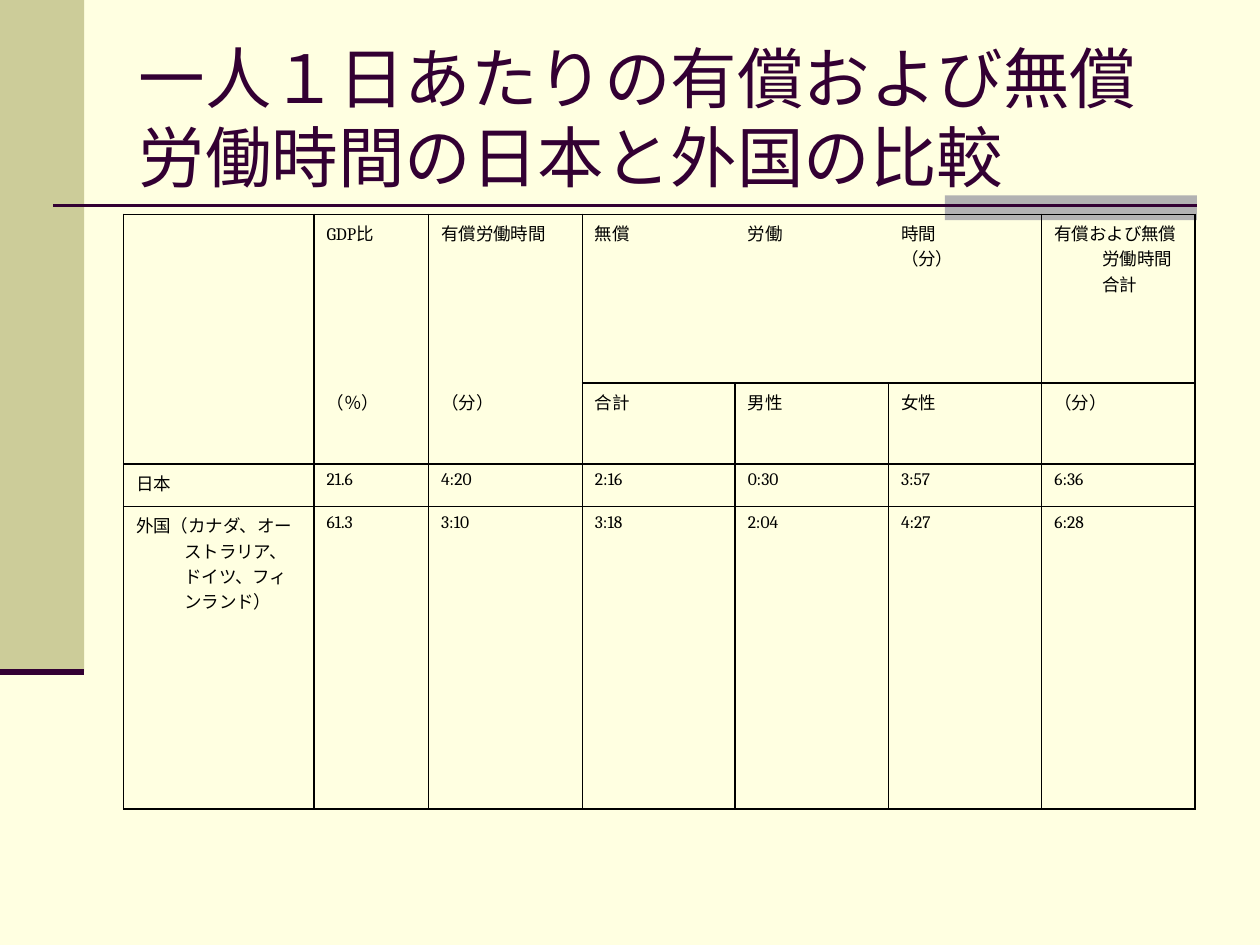
from lxml import etree
from pptx import Presentation
from pptx.dml.color import RGBColor
from pptx.enum import shapes, text
from pptx.oxml import ns
from pptx.util import Cm, Pt

TITLE = "一人１日あたりの有償および無償労働時間の日本と外国の比較"
ROWS = [
    ["", "GDP比", "有償労働時間", "無償", "労働", "時間\n（分）", "有償および無償労働時間合計"],
    ["", "（％）", "（分）", "合計", "男性", "女性", "（分）"],
    ["日本", "21.6", "4:20", "2:16", "0:30", "3:57", "6:36"],
    ["外国（カナダ、オーストラリア、ドイツ、フィンランド）",
     "61.3", "3:10", "3:18", "2:04", "4:27", "6:28"],
]
WIDTHS = [3.84, 2.31, 3.1, 3.08, 3.09, 3.09, 3.09]
HEIGHTS = [3.4, 1.63, 0.86, 6.1]
COLORS = {"page": "FFFFE1", "band": "CCCC99", "tab": "B2B2B2",
          "plum": "330033", "ink": "000000"}
BLOCKS = [("band", 0, 0, 1.7, 13.54), ("tab", 19.05, 3.94, 5.08, 0.5)]
RULES = [(1.07, 24.13, 4.14, 1.5), (0, 1.7, 13.54, 3.5)]
SIDES = {"L": (0, -1), "R": (0, 1), "T": (-1, 0), "B": (1, 0)}
OPEN = [{(0, c), (1, c)} for c in range(3)] + [{(0, c), (0, c + 1)} for c in (3, 4)]
THIN = {(0, 6), (1, 6)}


def color(name):
    return RGBColor.from_string(COLORS[name])


def add_block(slide, name, *box):
    block = slide.shapes.add_shape(shapes.MSO_SHAPE.RECTANGLE, *map(Cm, box))
    block.shadow.inherit = False
    block.fill.solid()
    block.fill.fore_color.rgb = color(name)
    block.line.fill.background()


def add_rule(slide, left, right, y, weight):
    rule = slide.shapes.add_connector(
        shapes.MSO_CONNECTOR.STRAIGHT, Cm(left), Cm(y), Cm(right), Cm(y))
    rule.line.color.rgb = color("plum")
    rule.line.width = Pt(weight)
    etree.SubElement(rule.element.spPr, ns.qn("a:effectLst"))
    return rule


def set_edges(cell, row, col):
    props = cell._tc.get_or_add_tcPr()
    for side, (down, over) in SIDES.items():
        pair = {(row, col), (row + down, col + over)}
        weight = 0.75 if pair == THIN else 1
        edge = etree.SubElement(props, ns.qn("a:ln" + side), w=str(Pt(weight)))
        if pair in OPEN:
            etree.SubElement(edge, ns.qn("a:noFill"))
        else:
            fill = etree.SubElement(edge, ns.qn("a:solidFill"))
            etree.SubElement(fill, ns.qn("a:srgbClr"), val=COLORS["ink"])


def fill_cell(cell, words, row, col):
    set_edges(cell, row, col)
    cell.fill.background()
    cell.text = words
    for para in cell.text_frame.paragraphs:
        props = para._p.get_or_add_pPr()
        props.set("marL", str(Cm(0.97)))
        props.set("indent", str(Cm(-0.97)))
        para.font.name = "Cambria"
        para.font.size = Pt(10)
        para.font.color.rgb = color("ink")


def add_grid(slide):
    box = map(Cm, (2.49, 4.32, sum(WIDTHS), sum(HEIGHTS)))
    grid = slide.shapes.add_table(len(HEIGHTS), len(WIDTHS), *box).table
    grid.first_row = grid.horz_banding = False
    for column, width in zip(grid.columns, WIDTHS):
        column.width = Cm(width)
    for r, (line, height) in enumerate(zip(ROWS, HEIGHTS)):
        grid.rows[r].height = Cm(height)
        for c, words in enumerate(line):
            fill_cell(grid.cell(r, c), words, r, c)


def set_title(title):
    title.left, title.top, title.width, title.height = map(Cm, (2.54, 0.76, 21.59, 3.18))
    frame = title.text_frame
    frame.text = TITLE
    frame.word_wrap = True
    frame.auto_size = text.MSO_AUTO_SIZE.NONE
    frame.vertical_anchor = text.MSO_ANCHOR.MIDDLE
    para = frame.paragraphs[0]
    para.alignment = text.PP_ALIGN.LEFT
    para.line_spacing = Pt(45)
    para.font.name = "Times New Roman"
    para.font.size = Pt(38)
    para.font.color.rgb = color("plum")


def main():
    deck = Presentation()
    deck.slide_width, deck.slide_height = Cm(25.4), Cm(19.05)
    slide = deck.slides.add_slide(deck.slide_layouts[5])
    slide.background.fill.solid()
    slide.background.fill.fore_color.rgb = color("page")
    for block in BLOCKS:
        add_block(slide, *block)
    for line in RULES:
        last = add_rule(slide, *line)
    title = slide.shapes.title
    set_title(title)
    last.element.addnext(title.element)
    add_grid(slide)
    deck.save("out.pptx")


if __name__ == "__main__":
    main()
